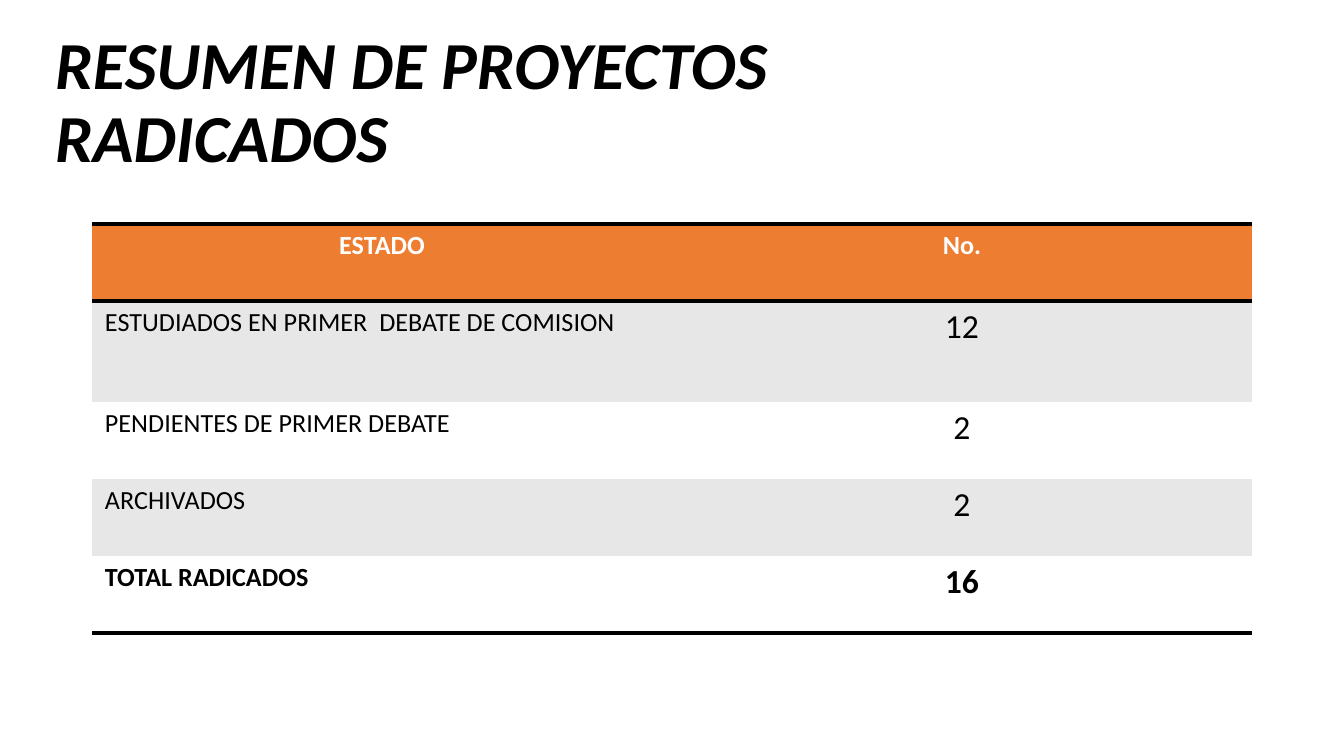
import pptx
import pptx.dml.color
import pptx.enum.text
import pptx.oxml
import pptx.oxml.ns
import pptx.util

RGBColor = pptx.dml.color.RGBColor
BLACK = RGBColor(0x00, 0x00, 0x00)
WHITE = RGBColor(0xFF, 0xFF, 0xFF)
ORANGE = RGBColor(0xED, 0x7D, 0x31)
GRAY = RGBColor(0xE7, 0xE7, 0xE7)

LEFT = pptx.enum.text.PP_ALIGN.LEFT
CENTER = pptx.enum.text.PP_ALIGN.CENTER
MIDDLE = pptx.enum.text.MSO_ANCHOR.MIDDLE
PLAIN_TABLE_STYLE = "{2D5ABB26-0587-4C30-8999-92F81FD0307C}"
PX_PER_INCH = 134.4


def px(length):
    return pptx.util.Inches(length / PX_PER_INCH)


def write_text(frame, text, font="Calibri", size=14, color=BLACK, bold=False,
               italic=False, align=LEFT, line_spacing=None):
    para = frame.paragraphs[0]
    para.text = text
    para.alignment = align
    para.line_spacing = line_spacing
    for span in para.runs:
        span.font.name = font
        span.font.size = pptx.util.Pt(size)
        span.font.color.rgb = color
        span.font.bold = bold
        span.font.italic = italic


class SlideBuilder:
    font = "Calibri"
    border_width = pptx.util.Pt(2)

    def __init__(self, page):
        self.page = page

    def title(self, text, left, top, width, height):
        box = self.page.shapes.add_textbox(px(left), px(top), px(width), px(height))
        frame = box.text_frame
        frame.word_wrap = True
        frame.vertical_anchor = MIDDLE
        write_text(frame, text, font=self.font, size=36, bold=True, italic=True,
                   line_spacing=0.9)

    def border(self, cell, side):
        line = pptx.oxml.parse_xml(
            f'<a:ln{side} {pptx.oxml.ns.nsdecls("a")} w="{self.border_width}">'
            f'<a:solidFill><a:srgbClr val="{BLACK}"/></a:solidFill></a:ln{side}>')
        cell._tc.get_or_add_tcPr().append(line)

    def cell(self, cell, text, fill, borders, **text_format):
        cell.margin_left = cell.margin_right = px(13)
        cell.margin_top = cell.margin_bottom = px(6)
        for side in borders:
            self.border(cell, side)
        cell.fill.solid()
        cell.fill.fore_color.rgb = fill
        write_text(cell.text_frame, text, font=self.font, **text_format)

    def table(self, rows, left, top, column_width, row_heights):
        columns = len(rows[0])
        shape = self.page.shapes.add_table(
            len(rows), columns, px(left), px(top),
            px(column_width * columns), px(sum(row_heights)))
        table = shape.table
        table.horz_banding = False
        table._tbl.tblPr.find(pptx.oxml.ns.qn("a:tableStyleId")).text = PLAIN_TABLE_STYLE
        for column in table.columns:
            column.width = px(column_width)
        last = len(rows) - 1
        for index, (values, height) in enumerate(zip(rows, row_heights)):
            table.rows[index].height = px(height)
            header = index == 0
            fill = ORANGE if header else GRAY if index % 2 else WHITE
            borders = "TB" if header else "B" if index == last else ""
            for position, text in enumerate(values):
                number = position == 1
                self.cell(table.cell(index, position), text, fill, borders,
                          size=18 if number and not header else 14,
                          color=WHITE if header else BLACK,
                          bold=index in (0, last),
                          align=CENTER if header or number else LEFT)


def main():
    deck = pptx.Presentation()
    deck.slide_width = px(1344)
    deck.slide_height = px(756)
    builder = SlideBuilder(deck.slides.add_slide(deck.slide_layouts[6]))
    builder.title("RESUMEN DE PROYECTOS\vRADICADOS", 42, -1, 825, 211)
    builder.table(
        [("ESTADO", "No."),
         ("ESTUDIADOS EN PRIMER  DEBATE DE COMISION", "12"),
         ("PENDIENTES DE PRIMER DEBATE", "2"),
         ("ARCHIVADOS", "2"),
         ("TOTAL RADICADOS", "16")],
        left=92, top=224, column_width=580, row_heights=(77, 101, 77, 77, 77))
    deck.save("out.pptx")


if __name__ == "__main__":
    main()
